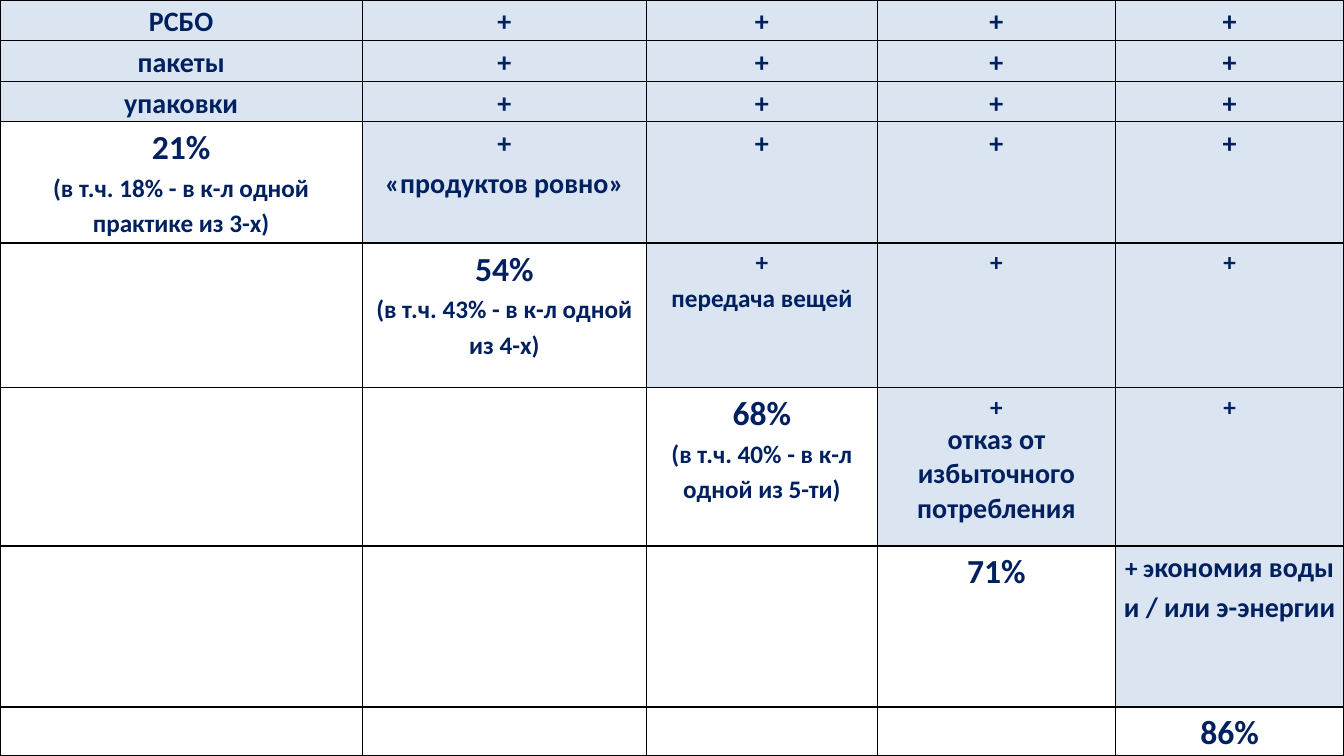
"""Build a slide with a stepped table of eco practices and their shares."""
from dataclasses import dataclass

from lxml.etree import SubElement
from pptx import Presentation
from pptx.dml.color import RGBColor
from pptx.enum.text import PP_ALIGN
from pptx.oxml.ns import qn
from pptx.util import Pt

COLORS = {"text": "002060", "fill": "DBE5F1", "border": "000000"}
FONT = "Calibri"
COL_WIDTHS = (258.8, 203, 165, 170, 163.2)
ROW_HEIGHTS = (29, 29, 29, 86.6, 103.2, 113.2, 115, 35)
COMMON_PRACTICES = ("РСБО", "пакеты", "упаковки")


@dataclass(frozen=True)
class Run:
    text: str
    size: float = 20


@dataclass(frozen=True)
class Line:
    runs: tuple[Run, ...]
    spacing: float = 1.15


@dataclass(frozen=True)
class Step:
    share: str
    detail: str = ""
    added: tuple[Line, ...] = ()
    plus_size: float = 20


def line(text: str, size: float = 20, spacing: float = 1.15) -> Line:
    """Return a line made of one run."""
    return Line((Run(text, size),), spacing)


STEPS = (
    Step("21%", "(в т.ч. 18% - в к-л одной практике из 3-х)",
         (line("+"), line("«продуктов ровно»"))),
    Step("54%", "(в т.ч. 43% - в к-л одной из 4-х)",
         (line("+", 18), line("передача вещей", 18)), 18),
    Step("68%", "(в т.ч. 40% - в к-л одной из 5-ти)",
         (line("+", 18), line("отказ от избыточного потребления", 20, 1)), 18),
    Step("71%", added=(Line((Run("+ э", 18), Run("кономия воды и / или э-энергии"))),)),
    Step("86%"),
)


def step_lines(row: int, col: int) -> tuple[Line, ...]:
    """Return the lines of one cell in the stepped part of the table."""
    step = STEPS[row]
    if col < row:
        return ()
    if col == row:
        detail = (line(step.detail, 18),) if step.detail else ()
        return (line(step.share, 24), *detail)
    return step.added if col == row + 1 else (line("+", step.plus_size),)


def add_borders(cell) -> None:
    """Draw a thin line on each side of a cell."""
    tc_pr = cell._tc.get_or_add_tcPr()
    for side in ("a:lnL", "a:lnR", "a:lnT", "a:lnB"):
        ln = SubElement(tc_pr, qn(side), w=str(Pt(1)))
        SubElement(SubElement(ln, qn("a:solidFill")), qn("a:srgbClr"), val=COLORS["border"])


def draw_cell(cell, lines: tuple[Line, ...], filled: bool) -> None:
    """Write and format one table cell."""
    cell.margin_left = cell.margin_right = Pt(5)
    cell.margin_top = cell.margin_bottom = Pt(0)
    add_borders(cell)
    if filled:
        cell.fill.solid()
        cell.fill.fore_color.rgb = RGBColor.from_string(COLORS["fill"])
    else:
        cell.fill.background()
    tf = cell.text_frame
    for i, item in enumerate(lines):
        p = tf.add_paragraph() if i else tf.paragraphs[0]
        p.alignment = PP_ALIGN.CENTER
        p.line_spacing = item.spacing
        for run in item.runs:
            r = p.add_run()
            r.text = run.text
            r.font.name = FONT
            r.font.size = Pt(run.size)
            r.font.bold = True
            r.font.color.rgb = RGBColor.from_string(COLORS["text"])


def main() -> None:
    """Build and save the presentation."""
    prs = Presentation()
    prs.slide_width, prs.slide_height = Pt(960), Pt(540)
    s = prs.slides.add_slide(prs.slide_layouts[6])
    table = s.shapes.add_table(len(ROW_HEIGHTS), len(COL_WIDTHS),
                               Pt(0), Pt(0), Pt(960), Pt(540)).table
    table.first_row = table.horz_banding = False
    for column, width in zip(table.columns, COL_WIDTHS):
        column.width = Pt(width)
    for row, height in zip(table.rows, ROW_HEIGHTS):
        row.height = Pt(height)

    for row, practice in enumerate(COMMON_PRACTICES):
        for col in range(len(COL_WIDTHS)):
            draw_cell(table.cell(row, col), (line("+" if col else practice),), True)
    for row in range(len(STEPS)):
        for col in range(len(COL_WIDTHS)):
            cell = table.cell(row + len(COMMON_PRACTICES), col)
            draw_cell(cell, step_lines(row, col), col > row)
    prs.save("out.pptx")


if __name__ == "__main__":
    main()
